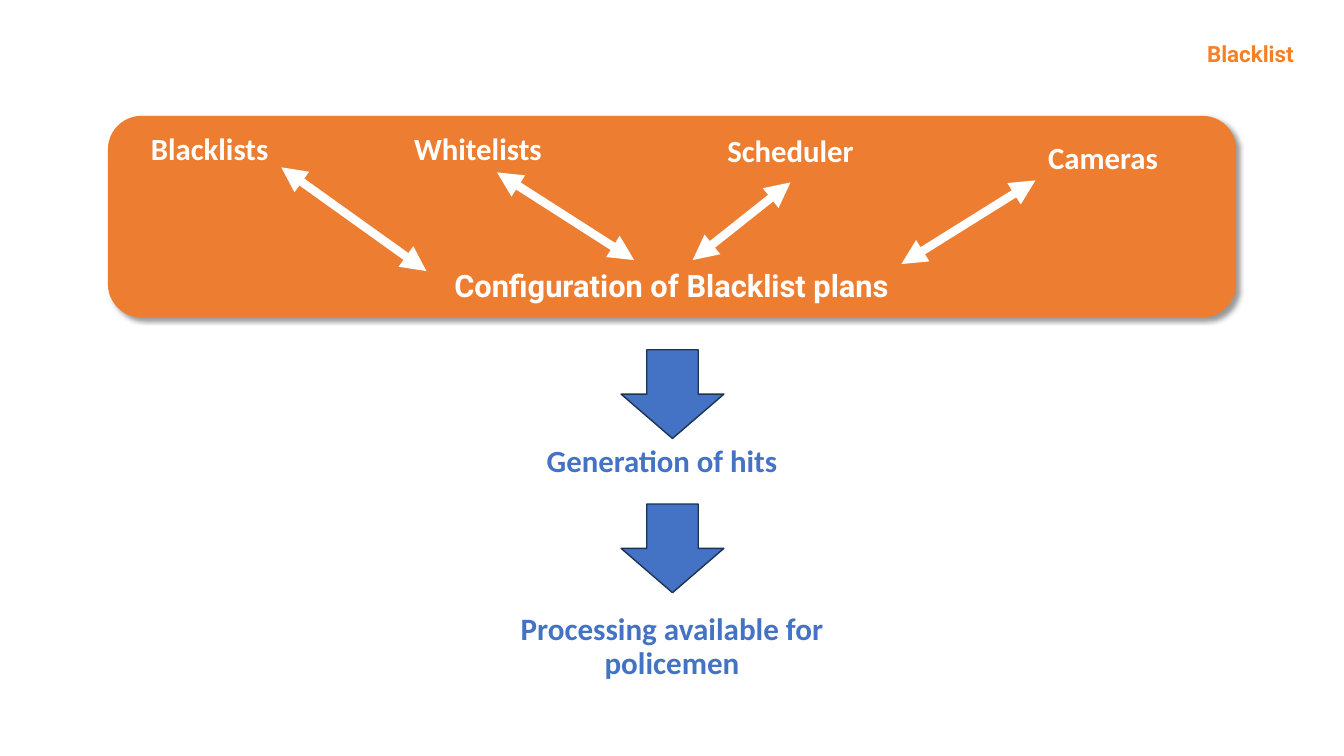
from lxml.etree import SubElement
from pptx import Presentation
from pptx.dml.color import RGBColor
from pptx.enum.shapes import MSO_CONNECTOR, MSO_SHAPE
from pptx.enum.text import MSO_ANCHOR, PP_ALIGN
from pptx.oxml.ns import qn
from pptx.util import Inches, Pt

COLORS = {
    "panel": "ED7D31",
    "title": "F58025",
    "blue": "4472C4",
    "outline": "1E3256",
    "white": "FFFFFF",
    "shadow": "000000",
}


def color(name):
    return RGBColor.from_string(COLORS[name])


def add_text(text, left, top, width, height=0.52, fill="white", size=22,
             font="Calibri", align=PP_ALIGN.CENTER, anchor=MSO_ANCHOR.TOP):
    box = slide.shapes.add_textbox(Inches(left), Inches(top), Inches(width), Inches(height))
    frame = box.text_frame
    frame.word_wrap = True
    frame.vertical_anchor = anchor
    paragraph = frame.paragraphs[0]
    paragraph.alignment = align
    paragraph.line_spacing = 0.9
    run = paragraph.add_run()
    run.text = text
    run.font.name = font
    run.font.size = Pt(size)
    run.font.bold = True
    run.font.color.rgb = color(fill)


presentation = Presentation()
presentation.slide_width = Inches(13.33)
presentation.slide_height = Inches(7.5)
slide = presentation.slides.add_slide(presentation.slide_layouts[6])

# Configuration panel with a soft shadow to the lower right
panel = slide.shapes.add_shape(
    MSO_SHAPE.ROUNDED_RECTANGLE, Inches(1.07), Inches(1.15), Inches(11.19), Inches(2))
panel.fill.solid()
panel.fill.fore_color.rgb = color("panel")
panel.line.fill.background()
panel.shadow.inherit = False
effects = panel._element.spPr.find(qn("a:effectLst"))
shadow = SubElement(effects, qn("a:outerShdw"), blurRad=str(Pt(4)), dist=str(Pt(3)),
                    dir="2700000", algn="tl", rotWithShape="0")
shadow_color = SubElement(shadow, qn("a:srgbClr"), val=COLORS["shadow"])
SubElement(shadow_color, qn("a:alpha"), val="40000")

add_text("Configuration of Blacklist plans", 4.23, 2.55, 4.86,
         font="Roboto", anchor=MSO_ANCHOR.BOTTOM)

# Inputs of the configuration: label and box, then the ends of its arrow
inputs = [
    ("Blacklists", (0.88, 1.28, 2.4), (2.79, 1.66, 4.23, 2.69)),
    ("Whitelists", (2.31, 1.28, 4.86), (4.93, 1.71, 6.29, 2.58)),
    ("Scheduler", (5.41, 1.3, 4.86), (7.84, 1.81, 6.87, 2.58)),
    ("Cameras", (9.48, 1.37, 2.92), (10.27, 1.79, 8.94, 2.62)),
]
for label, box, ends in inputs:
    add_text(label, *box)
    arrow = slide.shapes.add_connector(
        MSO_CONNECTOR.STRAIGHT, *(Inches(value) for value in ends))
    arrow.line.color.rgb = color("white")
    arrow.line.width = Pt(6)
    line = arrow.line._get_or_add_ln()
    for end in ("a:headEnd", "a:tailEnd"):
        SubElement(line, qn(end), type="triangle")
    SubElement(arrow._element.spPr, qn("a:effectLst"))

# Steps that follow the configuration
for top in (3.47, 5):
    step = slide.shapes.add_shape(
        MSO_SHAPE.DOWN_ARROW, Inches(6.16), Inches(top), Inches(1.02), Inches(0.88))
    step.fill.solid()
    step.fill.fore_color.rgb = color("blue")
    step.line.color.rgb = color("outline")
    step.line.width = Pt(1)
    step.shadow.inherit = False

add_text("Generation of hits", 2.01, 4.37, 9.11, fill="blue")
add_text("Processing available for policemen", 4.64, 6.04, 4.05, 0.82, fill="blue", size=22.2)

add_text("Blacklist", 6.9, 0.29, 6.03, fill="title", size=16, font="Roboto",
         align=PP_ALIGN.RIGHT, anchor=MSO_ANCHOR.MIDDLE)

presentation.save("out.pptx")
